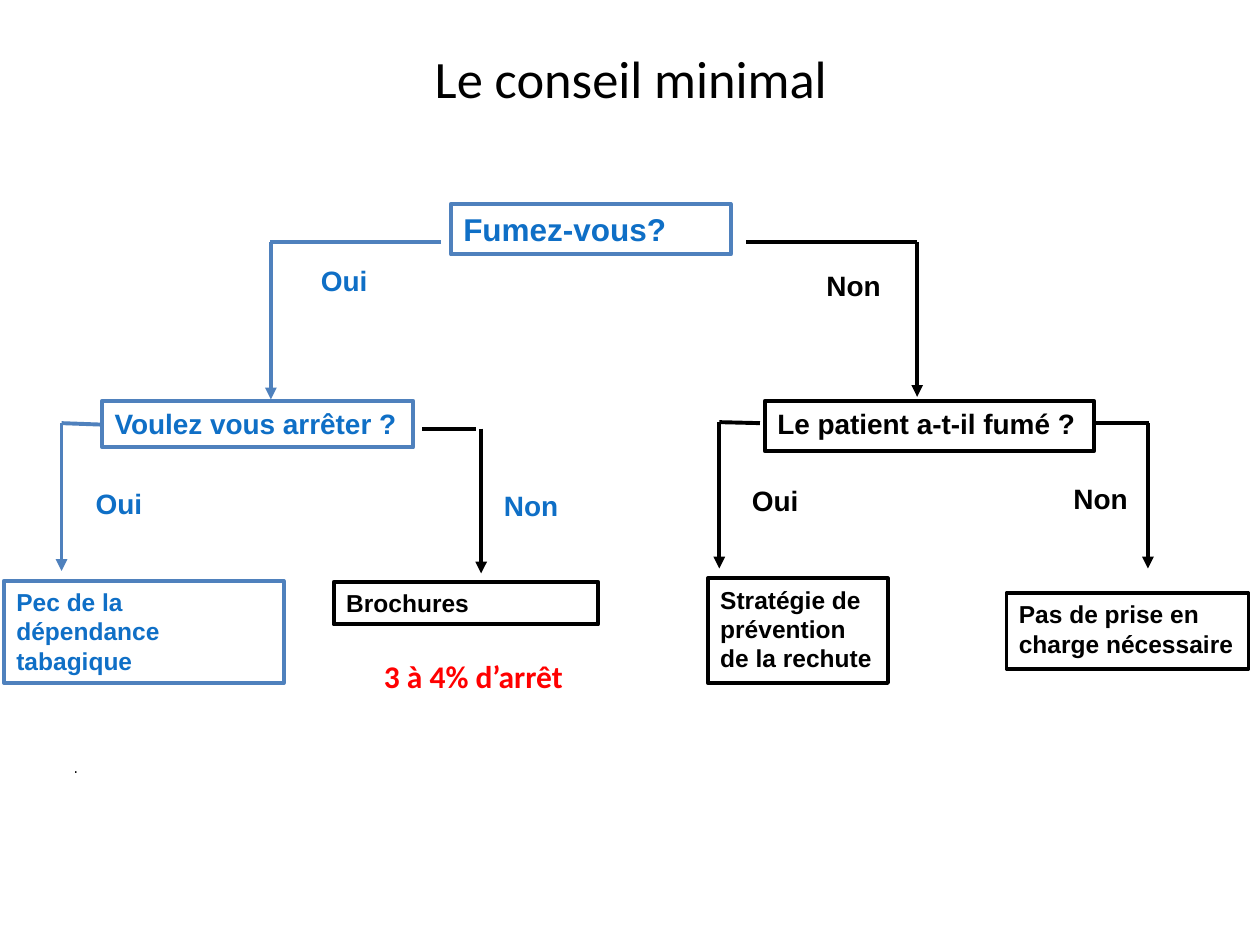
from lxml import etree
from pptx import Presentation, util as u
from pptx.dml import color
from pptx.enum import shapes, text
from pptx.oxml import ns

COLORS = {
    "outline": "4F81BD",
    "blue": "0F6FC6",
    "black": "000000",
    "red": "FF0000",
}
LINE_WIDTH = u.Pt(2.25)

BOXES = [
    (9.09, 4.11, 5.64, 1.02, 18, "blue", True, ["Fumez-vous?"]),
    (2.06, 8.08, 6.27, 0.94, 16, "blue", False, ["Voulez vous arrêter ?"]),
    (6.73, 11.73, 5.33, 0.86, 14, "black", True, ["Brochures"]),
    (0.08, 11.71, 5.64, 2.06, 14, "blue", True, ["Pec de la dépendance tabagique"]),
    (15.42, 8.08, 6.63, 1.02, 16, "black", False, ["Le patient a-t-il fumé ?"]),
    (14.27, 11.66, 3.63, 2.11, 14, "black", False,
     ["Stratégie de", "prévention", "de la rechute"]),
    (20.29, 11.96, 4.88, 1.52, 14, "black", False,
     ["Pas de prise en", "charge nécessaire"]),
]

BRANCHES = [
    ((8.89, 4.88), (5.44, 4.88), (5.46, 8.05), "outline"),
    ((15.04, 4.88), (18.49, 4.88), (18.49, 8), "black"),
    ((2.06, 8.56), (1.24, 8.53), (1.24, 11.51), "outline"),
    ((8.51, 8.64), (9.6, 8.64), (9.7, 11.56), "black"),
    ((15.32, 8.53), (14.5, 8.51), (14.5, 11.46), "black"),
    ((22.07, 8.53), (23.16, 8.53), (23.14, 11.46), "black"),
]

ANSWERS = [
    (6.22, 5.18, "Oui", "blue"),
    (16.41, 5.28, "Non", "black"),
    (1.68, 9.68, "Oui", "blue"),
    (9.91, 9.73, "Non", "blue"),
    (14.91, 9.63, "Oui", "black"),
    (21.39, 9.58, "Non", "black"),
]
ANSWER_WIDTHS = {"Oui": 1.45, "Non": 1.6}


def rgb(name):
    return color.RGBColor.from_string(COLORS[name])


def write_text(frame, lines, size, color_name, font="Arial", bold=True, wrap=True):
    frame.word_wrap = wrap
    frame.auto_size = text.MSO_AUTO_SIZE.SHAPE_TO_FIT_TEXT
    frame.vertical_anchor = text.MSO_ANCHOR.TOP
    for index, line in enumerate(lines):
        paragraph = frame.add_paragraph() if index else frame.paragraphs[0]
        paragraph.alignment = text.PP_ALIGN.LEFT
        run = paragraph.add_run()
        run.text = line
        run.font.name = font
        run.font.size = u.Pt(size)
        run.font.bold = bold
        run.font.color.rgb = rgb(color_name)


def add_title(slide, wording):
    title = slide.shapes.title
    title.left, title.top = u.Cm(-0.18), u.Cm(-0.03)
    title.width, title.height = u.Cm(26.04), u.Cm(3.18)
    frame = title.text_frame
    write_text(frame, [wording], 30, "black", "Calibri", False)
    frame.auto_size = text.MSO_AUTO_SIZE.NONE
    frame.vertical_anchor = text.MSO_ANCHOR.MIDDLE
    frame.paragraphs[0].alignment = text.PP_ALIGN.CENTER


def add_box(slide, left, top, width, height, size, color_name, wrap, lines):
    box = slide.shapes.add_shape(
        shapes.MSO_SHAPE.RECTANGLE, u.Cm(left), u.Cm(top), u.Cm(width), u.Cm(height))
    box.shadow.inherit = False
    box.fill.background()
    box.line.width = LINE_WIDTH
    box.line.color.rgb = rgb("outline" if color_name == "blue" else color_name)
    write_text(box.text_frame, lines, size, color_name, wrap=wrap)


def add_label(slide, left, top, width, height, wording, size, color_name, **style):
    label = slide.shapes.add_textbox(u.Cm(left), u.Cm(top), u.Cm(width), u.Cm(height))
    write_text(label.text_frame, [wording], size, color_name, **style)


def add_line(slide, start, end, color_name, arrow=False):
    line = slide.shapes.add_connector(
        shapes.MSO_CONNECTOR.STRAIGHT, *(u.Cm(value) for value in start + end))
    line.line.width = LINE_WIDTH
    line.line.color.rgb = rgb(color_name)
    if arrow:
        etree.SubElement(line.line._get_or_add_ln(), ns.qn("a:tailEnd"), type="triangle")
    etree.SubElement(line._element.spPr, ns.qn("a:effectLst"))


def add_branch(slide, start, corner, end, color_name):
    add_line(slide, start, corner, color_name)
    add_line(slide, (end[0], corner[1]), end, color_name, arrow=True)


def main():
    presentation = Presentation()
    presentation.slide_width, presentation.slide_height = u.Cm(25.4), u.Cm(19.05)
    slide = presentation.slides.add_slide(presentation.slide_layouts[5])
    add_title(slide, "Le conseil minimal ")
    for box in BOXES:
        add_box(slide, *box)
    for branch in BRANCHES:
        add_branch(slide, *branch)
    for left, top, wording, color_name in ANSWERS:
        add_label(slide, left, top, ANSWER_WIDTHS[wording], 0.94, wording, 16,
                  color_name, wrap=False)
    add_label(slide, 1.24, 15.11, 24, 1.12, ".", 10, "black",
              font="Arial Narrow", bold=False)
    add_label(slide, 7.49, 13.13, 4.6, 1.02, "3 à 4% d’arrêt", 18, "red", font="Calibri")
    presentation.save("out.pptx")


if __name__ == "__main__":
    main()
